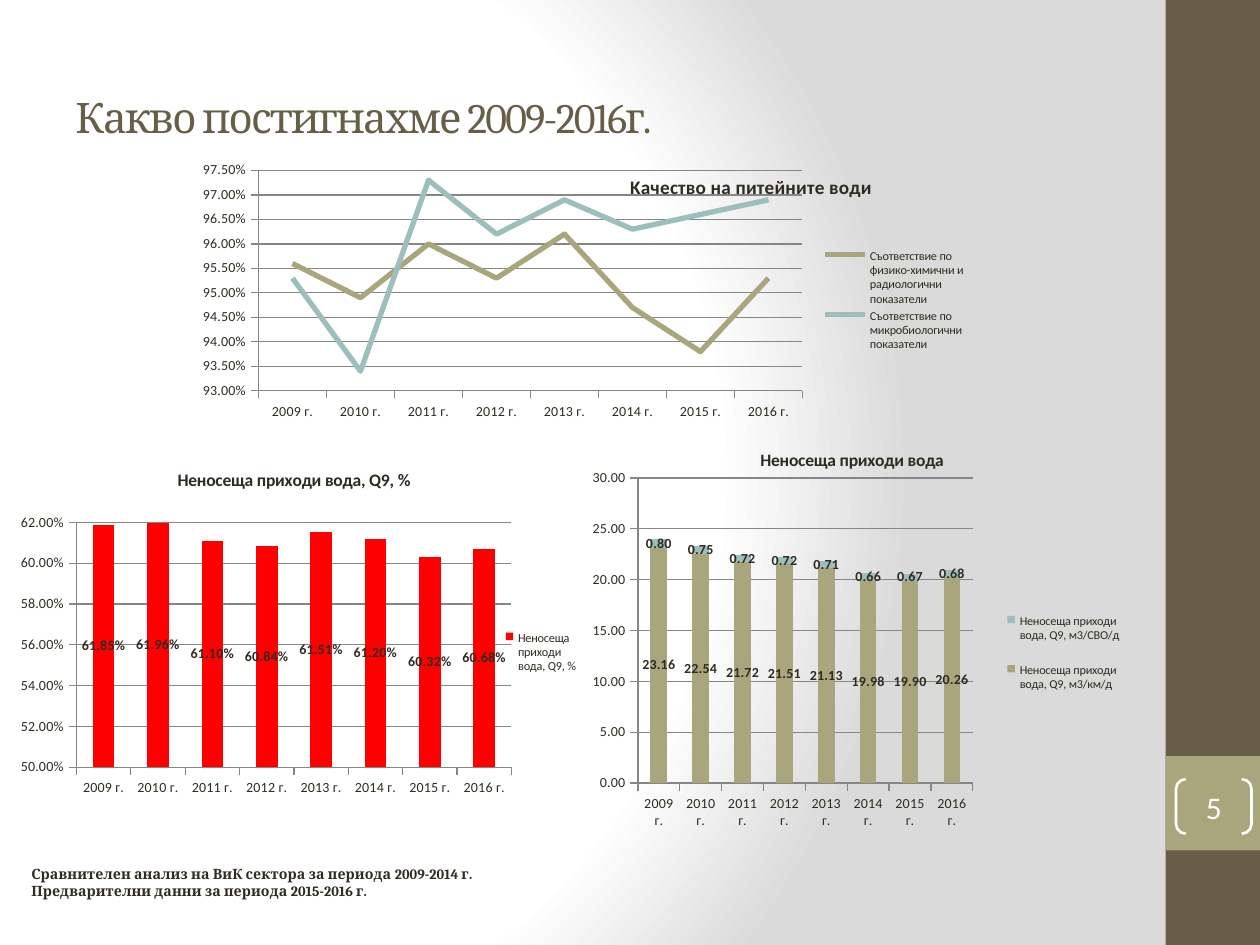
import pptx
import pptx.util
import pptx.oxml
import pptx.dml.color
import pptx.chart.data
import pptx.enum.chart
import pptx.enum.shapes
import pptx.enum.text
from dataclasses import dataclass
from pptx.oxml.ns import qn

Pt = pptx.util.Pt
CELL = pptx.util.Inches(1) // 12
KIND = pptx.enum.chart.XL_CHART_TYPE
FORM = pptx.enum.shapes.MSO_SHAPE
ALIGN = pptx.enum.text.PP_ALIGN
YEARS = [f"{year} г." for year in range(2009, 2017)]
SPACE = 'xmlns:{0}="http://schemas.openxmlformats.org/{1}/2006/{2}"'
NS_A = SPACE.format("a", "drawingml", "main")
NS_P = SPACE.format("p", "presentationml", "main")
NS_C = SPACE.format("c", "drawingml", "chart")


@dataclass(frozen=True)
class Theme:
    brown: str = "675E47"
    olive: str = "A9A57C"
    teal: str = "9CBEBD"
    red: str = "FF0000"
    ink: str = "2F2B20"
    white: str = "FFFFFF"
    gray: str = "DADADA"
    grid: str = "868686"
    serif: str = "Cambria"
    sans: str = "Calibri"
    head: float = 24
    page: float = 18
    note: float = 8.1
    base: float = 10
    large: float = 11
    axis: float = 8
    key: float = 7


THEME = Theme()


def color(code):
    return pptx.dml.color.RGBColor.from_string(code)


def box(left, top, width, height):
    return [round(side * CELL) for side in (left, top, width, height)]


def style(font, size, face, code, bold=False):
    font.size, font.name, font.bold = Pt(size), face, bold
    font.color.rgb = color(code)


def paint(slide):
    stops = "".join(
        f'<a:gs pos="{spot * 1000}"><a:srgbClr val="{code}"/></a:gs>'
        for spot, code in [(0, THEME.white), (75, THEME.white), (100, THEME.gray)])
    back = pptx.oxml.parse_xml(
        f'<p:bg {NS_P} {NS_A}><p:bgPr><a:gradFill rotWithShape="1"><a:gsLst>{stops}</a:gsLst>'
        '<a:path path="circle"><a:fillToRect l="20000" t="50000" r="100000" b="50000"/></a:path>'
        '</a:gradFill><a:effectLst/></p:bgPr></p:bg>')
    slide.element.cSld.insert(0, back)


def block(slide, area, code):
    shape = slide.shapes.add_shape(FORM.RECTANGLE, *box(*area))
    shape.shadow.inherit = False
    shape.fill.solid()
    shape.fill.fore_color.rgb = color(code)
    shape.line.fill.background()


def write(shape, text, size, face, code, bold=False, align=ALIGN.LEFT):
    frame = shape.text_frame
    frame.word_wrap = True
    frame.vertical_anchor = pptx.enum.text.MSO_ANCHOR.MIDDLE
    frame.text = text
    for para in frame.paragraphs:
        para.alignment = align
        for run in para.runs:
            style(run.font, size, face, code, bold)
    return frame


def label(slide, area, *look):
    return write(slide.shapes.add_textbox(*box(*area)), *look)


def badge(slide, area, text):
    shape = slide.shapes.add_shape(FORM.DOUBLE_BRACKET, *box(*area))
    shape.shadow.inherit = False
    shape.adjustments[0] = 0.18
    shape.fill.background()
    shape.line.color.rgb = color(THEME.white)
    shape.line.width = Pt(1.5)
    frame = write(shape, text, THEME.page, THEME.sans, THEME.white, align=ALIGN.CENTER)
    frame.margin_left = frame.margin_right = frame.margin_top = frame.margin_bottom = 0


def layout(shares, inner=False):
    names = ["x", "y", "w", "h"][:len(shares)]
    target = '<c:layoutTarget val="inner"/>' if inner else ""
    modes = "".join(f'<c:{name}Mode val="edge"/>' for name in names[:2])
    sides = "".join(f'<c:{name} val="{share}"/>' for name, share in zip(names, shares))
    return pptx.oxml.parse_xml(
        f'<c:layout {NS_C}><c:manualLayout>{target}{modes}{sides}</c:manualLayout></c:layout>')


def place(part, shares):
    for old in part.findall(qn("c:layout")):
        part.remove(old)
    part.find(qn("c:overlay")).addprevious(layout(shares))


def scale(axis, low=None, high=None, step=None, form=None):
    style(axis.tick_labels.font, THEME.axis, THEME.sans, THEME.ink)
    axis.major_tick_mark = pptx.enum.chart.XL_TICK_MARK.OUTSIDE
    axis.format.line.color.rgb = color(THEME.grid)
    if form:
        axis.minimum_scale, axis.maximum_scale, axis.major_unit = low, high, step
        axis.tick_labels.number_format = form
        axis.tick_labels.number_format_is_linked = False
        axis.major_gridlines.format.line.color.rgb = color(THEME.grid)


def name(chart, text, size, over, spot):
    chart.has_title = True
    title = chart.chart_title
    title.text_frame.text = text
    style(title.text_frame.paragraphs[0].runs[0].font, size, THEME.sans, THEME.ink, True)
    part = title._element
    part.find(qn("c:overlay")).set("val", str(int(over)))
    if spot:
        place(part, spot)


def graph(slide, area, kind, title, rows, ticks, plot, legend,
          size=THEME.base, over=False, spot=None):
    low, high, step, form = ticks
    data = pptx.chart.data.CategoryChartData(number_format=form)
    data.categories = YEARS
    for text, code, nums in rows:
        data.add_series(text, nums)
    chart = slide.shapes.add_chart(kind, *box(*area), data).chart
    style(chart.font, THEME.base, THEME.sans, THEME.ink)
    name(chart, title, size, over, spot)
    scale(chart.category_axis)
    scale(chart.value_axis, low, high, step, form)
    chart.has_legend = True
    chart.legend.position = pptx.enum.chart.XL_LEGEND_POSITION.RIGHT
    chart.legend.include_in_layout = False
    style(chart.legend.font, THEME.key, THEME.sans, THEME.ink)
    place(chart.legend._element, legend)
    field = chart._chartSpace.chart.plotArea
    for old in field.findall(qn("c:layout")):
        field.remove(old)
    field.insert(0, layout(plot, inner=True))
    group = chart.plots[0]
    group.vary_by_categories = False
    for series, (text, code, nums) in zip(group.series, rows):
        if kind == KIND.LINE:
            series.smooth = False
            series.marker.style = pptx.enum.chart.XL_MARKER_STYLE.NONE
            series.format.line.color.rgb = color(code)
            series.format.line.width = Pt(3)
        else:
            group.gap_width, group.overlap = 150, 100
            series.format.fill.solid()
            series.format.fill.fore_color.rgb = color(code)
            tags = series.data_labels
            tags.show_value = True
            tags.number_format, tags.number_format_is_linked = form, False
            style(tags.font, THEME.axis, THEME.sans, THEME.ink, True)


def main():
    deck = pptx.Presentation()
    deck.slide_width, deck.slide_height = 120 * CELL, 90 * CELL
    slide = deck.slides.add_slide(deck.slide_layouts[6])
    paint(slide)
    block(slide, (111, 0, 9, 90), THEME.brown)
    block(slide, (111, 72, 9, 9), THEME.olive)
    head = label(slide, (6, 3.6, 100, 15), "Какво постигнахме 2009-2016г.",
                 THEME.head, THEME.serif, THEME.brown)
    head.paragraphs[0].runs[0].font._element.set("spc", "-100")
    badge(slide, (112, 74.2, 7.2, 5.2), "5")

    graph(slide, (17, 15, 76.2, 25), KIND.LINE, "Kaчество на питейните води", [
        ("Съответствие по физико-химични и радиологични показатели", THEME.olive,
         [0.956, 0.949, 0.96, 0.953, 0.962, 0.947, 0.938, 0.953]),
        ("Съответствие по микробиологични показатели", THEME.teal,
         [0.953, 0.934, 0.973, 0.962, 0.969, 0.963, 0.966, 0.969]),
    ], (0.93, 0.975, 0.005, "0.00%"), (0.1, 0.05, 0.68, 0.85), (0.8, 0.34, 0.19, 0.42),
        size=THEME.large, over=True, spot=(0.56, 0.05))

    label(slide, (1.8, 82, 56, 4),
          "Сравнителен анализ на ВиК сектора за периода 2009-2014 г.\n"
          "Предварителни данни за периода 2015-2016 г.",
          THEME.note, THEME.serif, THEME.ink, True)

    water = "Неносеща приходи вода"
    graph(slide, (0, 43, 56, 33.8), KIND.COLUMN_STACKED, f"{water}, Q9, %", [
        (f"{water}, Q9, %", THEME.red,
         [0.6185, 0.6196, 0.611, 0.6084, 0.6151, 0.612, 0.6032, 0.6068]),
    ], (0.5, 0.62, 0.02, "0.00%"), (0.13, 0.2, 0.74, 0.69), (0.85, 0.49, 0.14, 0.15))
    graph(slide, (55, 41, 52.3, 38), KIND.COLUMN_STACKED, water, [
        (f"{water}, Q9, м3/км/д", THEME.olive,
         [23.16, 22.54, 21.72, 21.51, 21.13, 19.98, 19.9, 20.26]),
        (f"{water}, Q9, м3/СВО/д", THEME.teal,
         [0.8, 0.75, 0.72, 0.72, 0.71, 0.66, 0.67, 0.68]),
    ], (0, 30, 5, "0.00"), (0.11, 0.12, 0.61, 0.77), (0.78, 0.41, 0.21, 0.3), over=True)
    deck.save("out.pptx")


if __name__ == "__main__":
    main()
